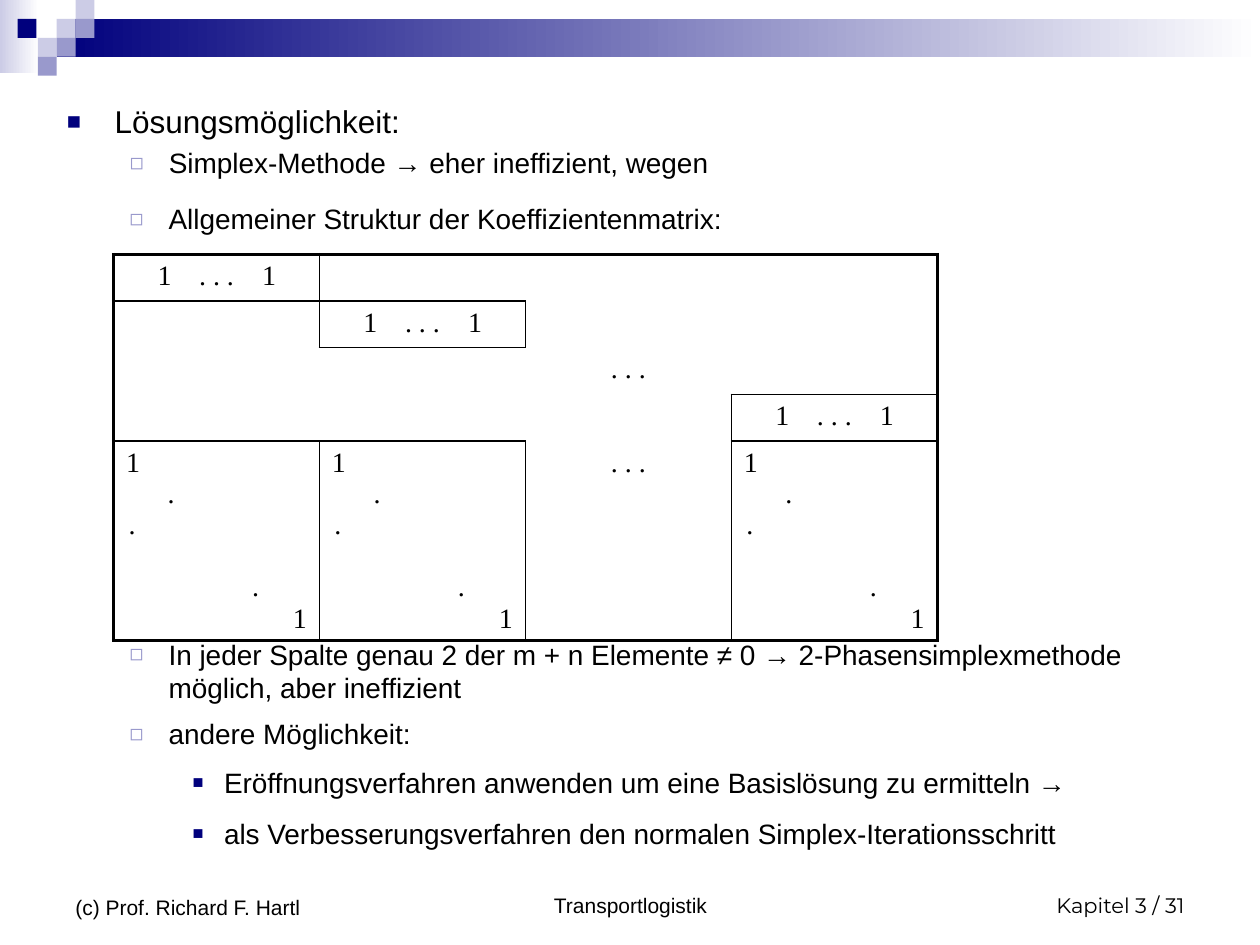
from lxml import etree
from pptx import Presentation
from pptx.dml.color import RGBColor
from pptx.enum.shapes import MSO_SHAPE
from pptx.enum.text import MSO_ANCHOR, MSO_AUTO_SIZE, PP_ALIGN
from pptx.oxml.ns import qn
from pptx.util import Inches, Pt

NAVY, LILAC, PALE, WHITE, BLACK = "00007D", "9999CC", "CCCCE6", "FFFFFF", "000000"

# level: (left indent, hanging, bullet, bullet colour, bullet size in percent, text size)
LEVELS = [
    (0.38, 0.38, "■", NAVY, 75, 18),
    (0.81, 0.31, "◻", LILAC, 80, 16),
    (1.25, 0.25, "■", NAVY, 65, 16),
]

BULLET_BOXES = [
    ((0.43, 1.55, 9, 0.47), 1, "Allgemeiner Struktur der Koeffizientenmatrix:"),
    ((0.43, 5.01, 9, 0.63), 1, "In jeder Spalte genau 2 der m + n Elemente ≠ 0 → "
                               "2-Phasensimplexmethode möglich, aber ineffizient"),
    ((0.43, 5.64, 9, 0.39), 1, "andere Möglichkeit:"),
    ((0.43, 6.03, 9, 0.47), 2, "Eröffnungsverfahren anwenden um eine Basislösung zu ermitteln →"),
    ((0.43, 6.43, 9, 0.39), 2, "als Verbesserungsverfahren den normalen Simplex-Iterationsschritt"),
]

FOOTERS = [
    ((0.5, 6.83, 2.33, 0.52), "(c) Prof. Richard F. Hartl", "Arial", PP_ALIGN.LEFT),
    ((3.42, 6.83, 3.17, 0.5), "Transportlogistik", "Arial", PP_ALIGN.CENTER),
    ((7.17, 6.83, 2.33, 0.5), "Kapitel 3 / 31", "Montserrat", PP_ALIGN.RIGHT),
]

ROW_BLOCKS = {(0, 0), (1, 1), (3, 3)}
UNIT_BLOCKS = {(4, 0), (4, 1), (4, 3)}
GAP_CELLS = {(2, 2), (4, 2)}
BOXED = ROW_BLOCKS | UNIT_BLOCKS


def rgb(colour):
    return RGBColor.from_string(colour)


def inches(box):
    return [Inches(length) for length in box]


def style(para, font, size):
    for span in para.runs:
        span.font.name = font
        span.font.size = Pt(size)
        span.font.color.rgb = rgb(BLACK)


def add_child(parent, tag, **attributes):
    return etree.SubElement(parent, qn(tag), {key: str(value) for key, value in attributes.items()})


def add_rectangle(page, box, colour, end_colour=None):
    """A plain rectangle, or one that fades to the right into end_colour."""
    shape = page.shapes.add_shape(MSO_SHAPE.RECTANGLE, *inches(box))
    shape.shadow.inherit = False
    shape.line.fill.background()
    if end_colour:
        shape.fill.gradient()
        shape.fill.gradient_angle = 0
        for stop, shade, position in zip(shape.fill.gradient_stops, (colour, end_colour), (0, 1)):
            stop.color.rgb = rgb(shade)
            stop.position = position
    else:
        shape.fill.solid()
        shape.fill.fore_color.rgb = rgb(colour)


def add_header(page, box):
    left, top, width, _ = box
    side = 0.15
    add_rectangle(page, (left, top, 0.31, 0.58), PALE, WHITE)
    add_rectangle(page, (left + 3 * side, top + side, width - 3 * side, 2 * side), NAVY, WHITE)
    squares = [(3, 1, PALE), (4, 0, PALE), (4, 1, LILAC), (2, 2, PALE),
               (0.93, 1, NAVY), (3, 2, LILAC), (2, 3, LILAC)]
    for col, row, colour in squares:
        add_rectangle(page, (left + col * side, top + row * side, side, side), colour)


def format_bullet(para, level):
    indent, hanging, char, colour, percent, size = LEVELS[level]
    para.level = level
    para.alignment = PP_ALIGN.LEFT
    para.space_before = Pt(size * 0.2)
    style(para, "Arial", size)
    props = para._p.get_or_add_pPr()
    props.set("marL", str(Inches(indent)))
    props.set("indent", str(-Inches(hanging)))
    add_child(add_child(props, "a:buClr"), "a:srgbClr", val=colour)
    add_child(props, "a:buSzPct", val=percent * 1000)
    add_child(props, "a:buFont", typeface="Arial")
    add_child(props, "a:buChar", char=char)


def fill_body(body, box):
    body.left, body.top, body.width, body.height = inches(box)
    frame = body.text_frame
    frame.auto_size = MSO_AUTO_SIZE.NONE
    frame.text = "Lösungsmöglichkeit:\nSimplex-Methode → eher ineffizient, wegen"
    for level, para in enumerate(frame.paragraphs):
        format_bullet(para, level)


def add_text(page, box, text):
    frame = page.shapes.add_textbox(*inches(box)).text_frame
    frame.word_wrap = True
    frame.text = text
    return frame


def add_footer(page, box, text, font, alignment):
    frame = add_text(page, box, text)
    frame.vertical_anchor = MSO_ANCHOR.BOTTOM
    frame.paragraphs[0].alignment = alignment
    style(frame.paragraphs[0], font, 12)


def draw_borders(cell, row, col, last_row, last_col):
    """Thick on the outside, thin around each boxed cell, otherwise none."""
    sides = [
        ("a:lnL", (row, col - 1), col == 0),
        ("a:lnR", (row, col + 1), col == last_col),
        ("a:lnT", (row - 1, col), row == 0),
        ("a:lnB", (row + 1, col), row == last_row),
    ]
    props = cell._tc.get_or_add_tcPr()
    for tag, neighbour, outer in sides:
        line = add_child(props, tag, w=Pt(2 if outer else 1))
        if outer or (row, col) in BOXED or neighbour in BOXED:
            add_child(add_child(line, "a:solidFill"), "a:srgbClr", val=BLACK)
        else:
            add_child(line, "a:noFill")


def fill_row_block(frame):
    frame.text = "\t1\t. . .\t1"
    para = frame.paragraphs[0]
    tabs = add_child(para._p.get_or_add_pPr(), "a:tabLst")
    for position in (0.25, 0.58, 1.08):
        add_child(tabs, "a:tab", pos=Inches(position), algn="l")


def fill_unit_block(frame):
    frame.text = "1\n.\n.\n.\n1"
    for para, indent in zip(frame.paragraphs, (0, 0.33, 0.02, 1, 0)):
        para._p.get_or_add_pPr().set("marL", str(Inches(indent)))
    frame.paragraphs[3].space_before = Pt(18)
    frame.paragraphs[4].alignment = PP_ALIGN.RIGHT


def fill_matrix_cell(cell, place):
    frame = cell.text_frame
    if place in ROW_BLOCKS:
        fill_row_block(frame)
    elif place in UNIT_BLOCKS:
        fill_unit_block(frame)
    elif place in GAP_CELLS:
        frame.text = ". . ."
        frame.paragraphs[0].alignment = PP_ALIGN.CENTER
    else:
        cell.margin_top = cell.margin_bottom = 0
    for para in frame.paragraphs:
        style(para, "Times New Roman", 16)


def add_matrix(page, box):
    heights = [0.37] * 4 + [1.58]
    table = page.shapes.add_table(len(heights), 4, *inches(box)).table
    table.first_row = table.horz_banding = False
    for column in table.columns:
        column.width = Inches(box[2] / 4)
    for row, height in enumerate(heights):
        table.rows[row].height = Inches(height)
        for col in range(4):
            cell = table.cell(row, col)
            draw_borders(cell, row, col, len(heights) - 1, 3)
            cell.fill.background()
            fill_matrix_cell(cell, (row, col))


def main():
    deck = Presentation()
    deck.slide_width, deck.slide_height = Inches(10), Inches(7.5)
    page = deck.slides.add_slide(deck.slide_layouts[1])
    title = page.shapes.title._element
    title.getparent().remove(title)
    add_header(page, (0, 0, 10, 0.6))
    fill_body(page.placeholders[1], (0.43, 0.76, 9.21, 0.71))
    add_matrix(page, (0.9, 2.02, 6.54, 3.06))
    for box, level, text in BULLET_BOXES:
        format_bullet(add_text(page, box, text).paragraphs[0], level)
    for footer in FOOTERS:
        add_footer(page, *footer)
    deck.save("out.pptx")


if __name__ == "__main__":
    main()
